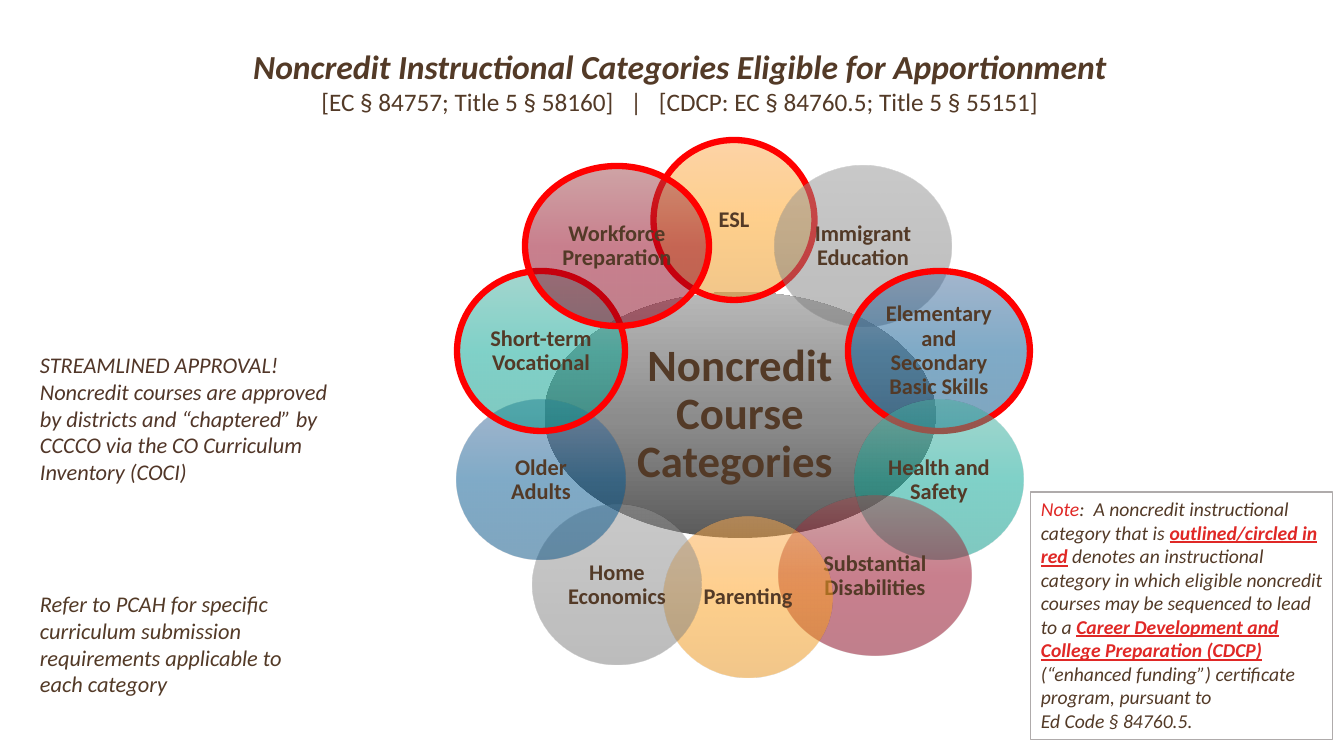
from lxml import etree
from pptx import Presentation
from pptx.dml.color import RGBColor
from pptx.enum.shapes import MSO_SHAPE
from pptx.enum.text import MSO_ANCHOR, MSO_AUTO_SIZE, PP_ALIGN
from pptx.oxml import parse_xml
from pptx.util import Emu, Pt

ELLIPSE = MSO_SHAPE.OVAL
RECTANGLE = MSO_SHAPE.RECTANGLE
LEFT, CENTER = PP_ALIGN.LEFT, PP_ALIGN.CENTER
TOP, MIDDLE = MSO_ANCHOR.TOP, MSO_ANCHOR.MIDDLE
GROW = MSO_AUTO_SIZE.SHAPE_TO_FIT_TEXT

SLIDE_W, SLIDE_H = 1344, 756
EMU_PER_PX = 12192000 / SLIDE_W
DRAWING_NS = "http://schemas.openxmlformats.org/drawingml/2006/main"

COLORS = {
    "text": "533A27",
    "approval": "513628",
    "accent": "E02826",
    "ring": "FF0000",
    "note_border": "AFABAB",
}
# Gradient stops: position in percent, colour
GRADIENTS = {
    "hub": [(0, "5B5B5B"), (48, "8C8C8C"), (100, "B8B8B8")],
    "orange": [(0, "FDAA4F"), (50, "FFA119"), (100, "E58F14")],
    "gray": [(0, "959595"), (50, "888888"), (100, "797979")],
    "blue": [(0, "4B6D9D"), (50, "005691"), (100, "004C81")],
    "teal": [(0, "4BAF9F"), (50, "00A593"), (100, "009383")],
    "red": [(0, "A04B4E"), (50, "94001C"), (100, "840019")],
}


def px(length):
    return Emu(round(length * EMU_PER_PX))


class SlideBuilder:
    """Holds the slide and its text style."""

    def __init__(self, slide, font="Calibri"):
        self.slide = slide
        self.font = font

    def style(self, paragraph, size, color="text", bold=False, italic=False,
              align=LEFT):
        paragraph.alignment = align
        font = paragraph.font
        font.name, font.size = self.font, Pt(size)
        font.bold, font.italic = bold, italic
        font.color.rgb = RGBColor.from_string(COLORS[color])

    def shape(self, kind, left, top, width, height):
        shape = self.slide.shapes.add_shape(
            kind, px(left), px(top), px(width), px(height))
        shape.shadow.inherit = False
        shape.fill.background()
        shape.line.fill.background()
        return shape

    def outline(self, shape, color, width):
        shape.line.color.rgb = RGBColor.from_string(COLORS[color])
        shape.line.width = Pt(width)

    def gradient(self, shape, name, angle, opacity):
        fill = parse_xml(f'<a:gradFill xmlns:a="{DRAWING_NS}" rotWithShape="1"/>')
        stops = etree.SubElement(fill, f"{{{DRAWING_NS}}}gsLst")
        for position, color in GRADIENTS[name]:
            stops.append(parse_xml(
                f'<a:gs xmlns:a="{DRAWING_NS}" pos="{position * 1000}">'
                f'<a:srgbClr val="{color}"><a:alpha val="{opacity * 1000}"/>'
                "</a:srgbClr></a:gs>"))
        fill.append(parse_xml(
            f'<a:lin xmlns:a="{DRAWING_NS}" ang="{angle * 60000}" scaled="0"/>'))
        properties = shape.element.spPr
        empty_fill = properties.find(f"{{{DRAWING_NS}}}noFill")
        properties.replace(empty_fill, fill)

    def bubble(self, label, center_x, center_y, width, height, gradient,
               size=16, inset=2, angle=90, opacity=50, ringed=False):
        bubble = self.shape(ELLIPSE, center_x - width / 2,
                            center_y - height / 2, width, height)
        self.gradient(bubble, gradient, angle, opacity)
        if ringed:
            self.outline(bubble, "ring", 4.5)
        frame = bubble.text_frame
        frame.word_wrap = True
        frame.vertical_anchor = MIDDLE
        frame.margin_left = frame.margin_right = px(inset)
        frame.margin_top = frame.margin_bottom = px(inset)
        paragraph = frame.paragraphs[0]
        paragraph.text = label
        paragraph.line_spacing = 0.9
        self.style(paragraph, size, bold=True, align=CENTER)

    def text(self, left, top, width, height, lines):
        """Each line is its text and its style settings."""
        box = self.slide.shapes.add_textbox(
            px(left), px(top), px(width), px(height))
        frame = box.text_frame
        frame.word_wrap = True
        frame.auto_size = GROW
        for index, (line, settings) in enumerate(lines):
            paragraph = frame.add_paragraph() if index else frame.paragraphs[0]
            paragraph.text = line
            self.style(paragraph, **settings)

    def note(self, left, top, width, height, paragraphs, size):
        """Each run is its text, whether it is red, and whether it is stressed."""
        note = self.shape(RECTANGLE, left, top, width, height)
        self.outline(note, "note_border", 0.75)
        frame = note.text_frame
        frame.word_wrap = True
        frame.auto_size = GROW
        frame.vertical_anchor = TOP
        for index, runs in enumerate(paragraphs):
            paragraph = frame.add_paragraph() if index else frame.paragraphs[0]
            self.style(paragraph, size, italic=True)
            for words, red, stressed in runs:
                run = paragraph.add_run()
                run.text = words
                if red:
                    run.font.color.rgb = RGBColor.from_string(COLORS["accent"])
                if stressed:
                    run.font.bold = run.font.underline = True


# Label, centre x, centre y, width, gradient, outlined in red
CATEGORIES = [
    ("ESL", 734, 220, 161, "orange", True),
    ("Immigrant Education", 863, 246, 176, "gray", False),
    ("Elementary and Secondary Basic Skills", 939, 351, 182, "blue", True),
    ("Health and Safety", 939, 480, 168, "teal", False),
    ("Substantial Disabilities", 875, 576, 193, "red", False),
    ("Parenting", 748, 597, 168, "orange", False),
    ("Home Economics", 617, 585, 168, "gray", False),
    ("Older Adults", 541, 480, 168, "blue", False),
    ("Short-term Vocational", 541, 351, 168, "teal", True),
    ("Workforce Preparation", 617, 246, 184, "red", True),
]
CATEGORY_HEIGHT = 160

NOTE = [
    [
        ("Note", True, False),
        (":  A noncredit instructional category that is ", False, False),
        ("outlined/circled in red", True, True),
        (" denotes an instructional category in which eligible noncredit "
         "courses may be sequenced to lead to a ", False, False),
        ("Career Development and College Preparation (CDCP)", True, True),
        (" (“enhanced funding”) certificate program, pursuant to",
         False, False),
    ],
    [("Ed Code § 84760.5.", False, False)],
]


def main():
    deck = Presentation()
    deck.slide_width, deck.slide_height = px(SLIDE_W), px(SLIDE_H)
    builder = SlideBuilder(deck.slides.add_slide(deck.slide_layouts[6]))

    # Hub and the ring of categories
    builder.bubble("Noncredit Course Categories ", 740, 415, 391, 246, "hub",
                   size=32, inset=4, angle=270, opacity=100)
    for label, center_x, center_y, width, gradient, ringed in CATEGORIES:
        builder.bubble(label, center_x, center_y, width, CATEGORY_HEIGHT,
                       gradient, ringed=ringed)

    # Note on the red outlines
    builder.note(1031, 492, 302, 248, NOTE, size=14)

    # Title and code references
    builder.text(109, 41, 1142, 82, [
        ("Noncredit Instructional Categories Eligible for Apportionment",
         {"size": 24, "bold": True, "italic": True, "align": CENTER}),
        ("[EC § 84757; Title 5 § 58160]   |   "
         "[CDCP: EC § 84760.5; Title 5 § 55151]",
         {"size": 18, "align": CENTER}),
    ])

    # Side remarks
    builder.text(30, 585, 295, 119, [
        ("Refer to PCAH for specific curriculum submission requirements "
         "applicable to each category", {"size": 16, "italic": True}),
    ])
    approval = {"size": 16, "color": "approval", "italic": True}
    builder.text(30, 346, 318, 146, [
        ("STREAMLINED APPROVAL!", approval),
        ("Noncredit courses are approved by districts and “chaptered” by "
         "CCCCO via the CO Curriculum Inventory (COCI)", approval),
    ])

    deck.save("out.pptx")


if __name__ == "__main__":
    main()
